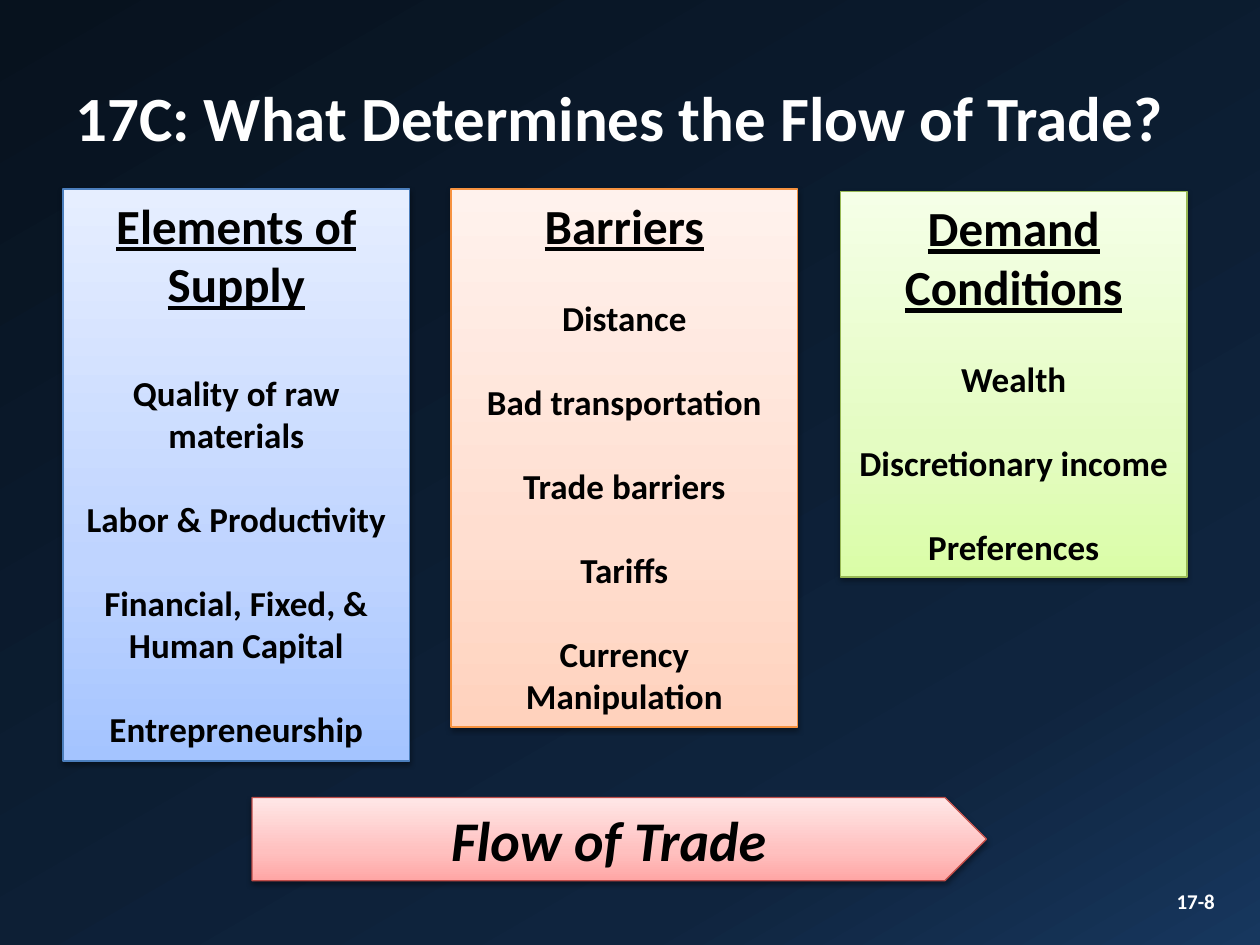
import pptx
import pptx.util
import pptx.dml.color
import pptx.enum.shapes
import pptx.enum.text
import pptx.oxml
import pptx.oxml.ns

Inches = pptx.util.Inches
Pt = pptx.util.Pt
RGBColor = pptx.dml.color.RGBColor
SHAPE = pptx.enum.shapes.MSO_SHAPE
ALIGN = pptx.enum.text.PP_ALIGN
ANCHOR = pptx.enum.text.MSO_ANCHOR
qn = pptx.oxml.ns.qn
NS = pptx.oxml.ns.nsdecls("a")

FONT = "Calibri"
WHITE = RGBColor(0xFF, 0xFF, 0xFF)
BLACK = RGBColor(0x00, 0x00, 0x00)
BLUE_LINE = RGBColor(0x4B, 0x7E, 0xBC)
ORANGE_LINE = RGBColor(0xF6, 0x92, 0x40)
GREEN_LINE = RGBColor(0x98, 0xB9, 0x55)
RED_LINE = RGBColor(0xBF, 0x4C, 0x48)


def shades(*codes):
    return [RGBColor.from_string(code) for code in codes]


NAVY = shades("07121E", "0F243E", "17375E")
BLUE = shades("A4C4FF", "BFD4FF", "E6EEFF")
ORANGE = shades("FFD2BD", "FFDED0", "FFF2ED")
GREEN = shades("DAFDA7", "E4FCC2", "F5FFE7")
RED = shades("FFA6A5", "FFC0BF", "FFE7E7")

COLUMNS = [
    (0.5, 1.5, 4.54, BLUE, BLUE_LINE, 33.5, "Elements of Supply",
     ["Quality of raw materials", "Labor & Productivity",
      "Financial, Fixed, & Human Capital", "Entrepreneurship"]),
    (3.58, 1.5, 4.27, ORANGE, ORANGE_LINE, 24, "Barriers",
     ["Distance", "Bad transportation", "Trade barriers", "Tariffs",
      "Currency Manipulation"]),
    (6.67, 1.52, 3.06, GREEN, GREEN_LINE, 24, "Demand Conditions",
     ["Wealth", "Discretionary income", "Preferences"]),
]


def set_gradient(fill, element, colors, middle, angle):
    fill.gradient()
    fill.gradient_angle = 360 - angle
    stops = element.find(".//" + qn("a:gsLst"))
    for stop in list(stops):
        stops.remove(stop)
    for position, color in zip((0, middle, 100), colors):
        stops.append(pptx.oxml.parse_xml(
            f'<a:gs {NS} pos="{position * 1000}"><a:srgbClr val="{color}"/></a:gs>'))


def write(p, text, align, color=BLACK, **formats):
    p.alignment = align
    r = p.add_run()
    r.text = text
    r.font.color.rgb = color
    for name, value in {"name": FONT, "bold": True, **formats}.items():
        setattr(r.font, name, value)


def add_label(s, box, text, align, size):
    tf = s.shapes.add_textbox(*map(Inches, box)).text_frame
    tf.word_wrap = True
    tf.vertical_anchor = ANCHOR.MIDDLE
    write(tf.paragraphs[0], text, align, WHITE, size=Pt(size))


def add_panel(s, kind, box, colors, line, anchor):
    sp = s.shapes.add_shape(kind, *map(Inches, box))
    set_gradient(sp.fill, sp.element, colors, 35, 270)
    sp.line.color.rgb = line
    sp.line.width = Pt(0.75)
    sp.shadow.inherit = False
    sp.element.spPr.find(qn("a:effectLst")).append(pptx.oxml.parse_xml(
        f'<a:outerShdw {NS} blurRad="{Pt(3.1)}" dist="{Pt(1.6)}" dir="5400000" '
        'rotWithShape="0"><a:srgbClr val="000000"><a:alpha val="38000"/>'
        '</a:srgbClr></a:outerShdw>'))
    tf = sp.text_frame
    tf.word_wrap = True
    tf.vertical_anchor = anchor
    return tf


def add_column(s, box, colors, line, heading_gap, heading, items):
    tf = add_panel(s, SHAPE.RECTANGLE, box, colors, line, ANCHOR.TOP)
    tf.auto_size = pptx.enum.text.MSO_AUTO_SIZE.SHAPE_TO_FIT_TEXT
    write(tf.paragraphs[0], heading, ALIGN.CENTER, size=Pt(28), underline=True)
    for index, item in enumerate(items):
        p = tf.add_paragraph()
        p.space_before = Pt(24 if index else heading_gap)
        write(p, item, ALIGN.CENTER, size=Pt(20))


def add_flow_arrow(s, box):
    tf = add_panel(s, SHAPE.PENTAGON, box, RED, RED_LINE, ANCHOR.MIDDLE)
    write(tf.paragraphs[0], "Flow of Trade", ALIGN.CENTER, size=Pt(32), italic=True)


def main():
    prs = pptx.Presentation()
    prs.slide_width, prs.slide_height = Inches(10), Inches(7.5)
    s = prs.slides.add_slide(prs.slide_layouts[6])
    set_gradient(s.background.fill, s.element, NAVY, 78, 60)
    add_label(s, (0.5, 0.3, 9, 1.25), "17C: What Determines the Flow of Trade?",
              ALIGN.LEFT, 36)
    add_label(s, (6.92, 6.95, 2.82, 0.4), "17-8", ALIGN.RIGHT, 12)
    for left, top, height, *content in COLUMNS:
        add_column(s, (left, top, 2.75, height), *content)
    add_flow_arrow(s, (2, 6.33, 5.83, 0.66))
    prs.save("out.pptx")


if __name__ == "__main__":
    main()
